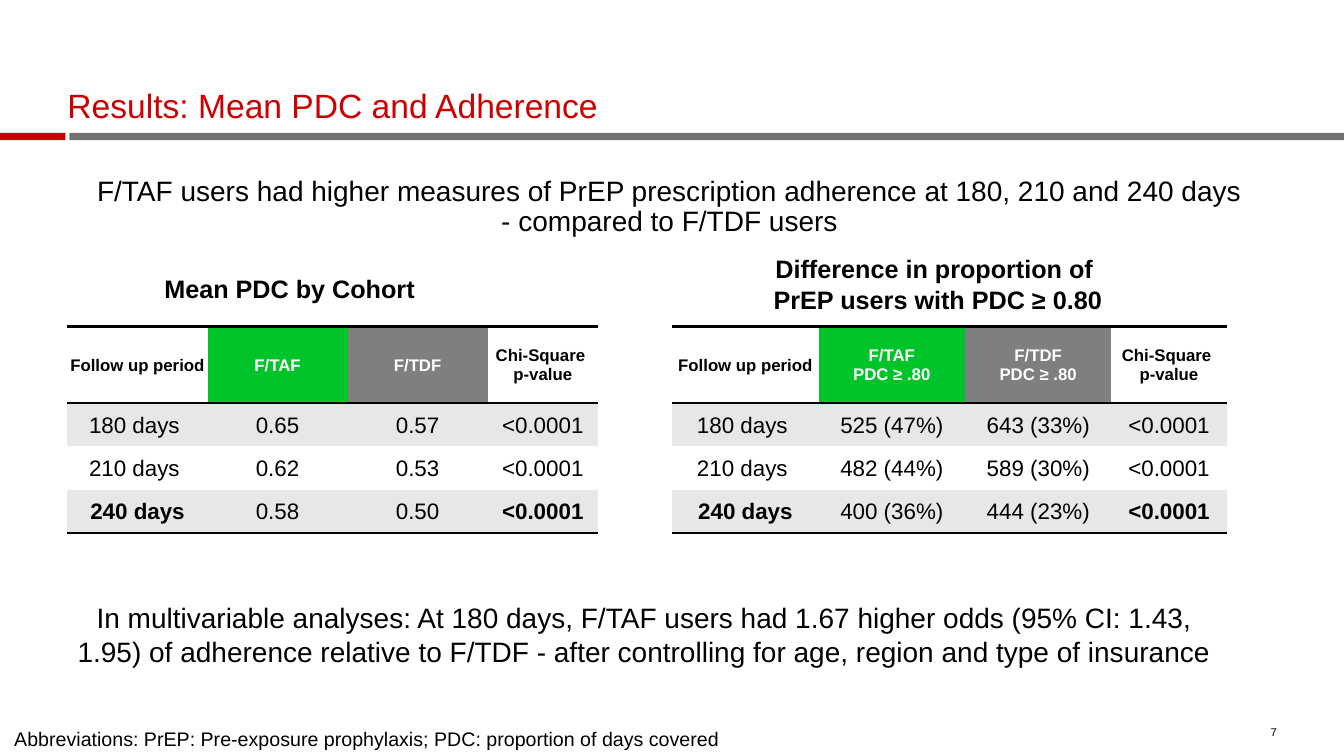
from lxml.etree import SubElement
from pptx import Presentation
from pptx.dml.color import RGBColor
from pptx.enum.shapes import MSO_SHAPE
from pptx.enum.text import MSO_ANCHOR, PP_ALIGN
from pptx.oxml.ns import qn
from pptx.util import Cm, Pt

COLOURS = {
    "red": "CC0000", "rule": "717171", "black": "000000", "white": "FFFFFF",
    "green": "00C42A", "grey": "7F7F7F", "band": "E7E7E7",
}
PLAIN_TABLE_STYLE = "{2D5ABB26-0587-4C30-8999-92F81FD0307C}"


def colour(name):
    return RGBColor.from_string(COLOURS[name])


class SlideBuilder:
    font = "Arial"

    def __init__(self, page):
        self.page = page

    def fill_text(self, frame, text, size, tint="black", bold=False,
                  align=PP_ALIGN.CENTER, spacing=None):
        """Fill a text frame, one paragraph per line of text."""
        frame.text = text
        for para in frame.paragraphs:
            para.alignment = align
            para.line_spacing = spacing
            para.font.name = self.font
            para.font.size = Pt(size)
            para.font.bold = bold
            para.font.color.rgb = colour(tint)

    def clear_margins(self, frame):
        frame.margin_left = frame.margin_right = 0
        frame.margin_top = frame.margin_bottom = 0

    def title(self, text, left, top, width, height):
        box = self.page.shapes.title
        box.left, box.top, box.width, box.height = map(Cm, (left, top, width, height))
        frame = box.text_frame
        self.clear_margins(frame)
        frame.vertical_anchor = MSO_ANCHOR.BOTTOM
        self.fill_text(frame, text, 24, "red", align=PP_ALIGN.LEFT, spacing=0.9)

    def bar(self, left, width, tint):
        box = self.page.shapes.add_shape(
            MSO_SHAPE.RECTANGLE, Cm(left), Cm(3.35), Cm(width), Cm(0.18))
        box.shadow.inherit = False
        box.fill.solid()
        box.fill.fore_color.rgb = colour(tint)
        box.line.fill.background()

    def text(self, text, left, top, width, height, size=20, wrap=True,
             margins=True, anchor=MSO_ANCHOR.TOP, **style):
        box = self.page.shapes.add_textbox(Cm(left), Cm(top), Cm(width), Cm(height))
        frame = box.text_frame
        frame.word_wrap = wrap
        frame.vertical_anchor = anchor
        if not margins:
            self.clear_margins(frame)
        self.fill_text(frame, text, size, **style)

    def border(self, cell, sides):
        """Draw black cell borders; sides are given in the order T, B."""
        properties = cell._tc.get_or_add_tcPr()
        for index, side in enumerate(sides):
            line = SubElement(properties, qn(f"a:ln{side}"), w=str(Pt(2)))
            fill = SubElement(line, qn("a:solidFill"))
            SubElement(fill, qn("a:srgbClr"), val=COLOURS["black"])
            properties.insert(index, line)

    def cell(self, cell, text, fill, **style):
        cell.margin_left = cell.margin_right = cell.margin_top = Cm(0.03)
        cell.margin_bottom = 0
        cell.vertical_anchor = MSO_ANCHOR.MIDDLE
        cell.fill.solid()
        cell.fill.fore_color.rgb = colour(fill)
        self.fill_text(cell.text_frame, text, **style)

    def table(self, rows, left, column_widths):
        heights = [1.93] + [1.09] * (len(rows) - 1)
        table = self.page.shapes.add_table(
            len(rows), len(column_widths), Cm(left), Cm(8.23),
            Cm(sum(column_widths)), Cm(sum(heights))).table
        table.first_row = table.horz_banding = False
        table._tbl.tblPr.find(qn("a:tableStyleId")).text = PLAIN_TABLE_STYLE
        for column, width in zip(table.columns, column_widths):
            column.width = Cm(width)
        header_fills = ["white", "green", "grey", "white"]
        last_row, last_column = len(rows) - 1, len(column_widths) - 1
        for r, (row, height) in enumerate(zip(rows, heights)):
            table.rows[r].height = Cm(height)
            for c, text in enumerate(row):
                cell = table.cell(r, c)
                outer = c in (0, last_column)
                if r == 0:
                    self.cell(cell, text, header_fills[c], size=12, bold=True,
                              tint="black" if outer else "white")
                    self.border(cell, "TB")
                else:
                    self.cell(cell, text, "band" if r % 2 else "white", size=16,
                              bold=r == last_row and outer)
                    if r == last_row:
                        self.border(cell, "B")


def main():
    deck = Presentation()
    deck.slide_width, deck.slide_height = Cm(33.87), Cm(19.05)
    slide = SlideBuilder(deck.slides.add_slide(deck.slide_layouts[5]))

    slide.bar(1.75, 32.12, "rule")
    slide.bar(0, 1.65, "red")
    slide.title("Results: Mean PDC and Adherence", 1.7, 1.3, 30.48, 1.88)

    periods = ["180 days ", "210 days ", "240 days"]
    mean_pdc = [("0.65", "0.57"), ("0.62", "0.53"), ("0.58", "0.50")]
    adherent = [("525 (47%)", "643 (33%)"), ("482 (44%)", "589 (30%)"),
                ("400 (36%)", "444 (23%)")]
    cohorts = [
        (mean_pdc, "", 1.7, [3.53, 3.53, 3.53, 2.78]),
        (adherent, "\nPDC ≥ .80", 16.94, [3.69, 3.69, 3.69, 2.9]),
    ]
    for values, suffix, left, widths in cohorts:
        header = ["Follow up period", "F/TAF" + suffix, "F/TDF" + suffix,
                  "Chi-Square \np-value"]
        body = [[period, *pair, "<0.0001"] for period, pair in zip(periods, values)]
        slide.table([header] + body, left, widths)

    slide.text("F/TAF users had higher measures of PrEP prescription adherence "
               "at 180, 210 and 240 days - compared to F/TDF users",
               2.03, 4.34, 29.69, 1.78, spacing=0.9)
    slide.text("In multivariable analyses: At 180 days, F/TAF users had 1.67 higher "
               "odds (95% CI: 1.43, 1.95) of adherence relative to F/TDF - after "
               "controlling for age, region and type of insurance",
               1.57, 15.01, 29.34, 2.74)
    slide.text("Mean PDC by Cohort", 3.86, 6.76, 6.88, 1.02,
               size=18, bold=True, wrap=False)
    slide.text("Difference in proportion of \nPrEP users with PDC ≥ 0.80",
               19.05, 6.27, 9.17, 1.8, size=18, bold=True)
    slide.text("7", 31.27, 18.16, 0.91, 0.46, size=8, margins=False,
               anchor=MSO_ANCHOR.BOTTOM, align=PP_ALIGN.RIGHT)
    slide.text("Abbreviations: PrEP: Pre-exposure prophylaxis; "
               "PDC: proportion of days covered",
               0.36, 18.39, 30.89, 0.53, size=14, margins=False,
               align=PP_ALIGN.LEFT, spacing=0.9)
    deck.save("out.pptx")


if __name__ == "__main__":
    main()
